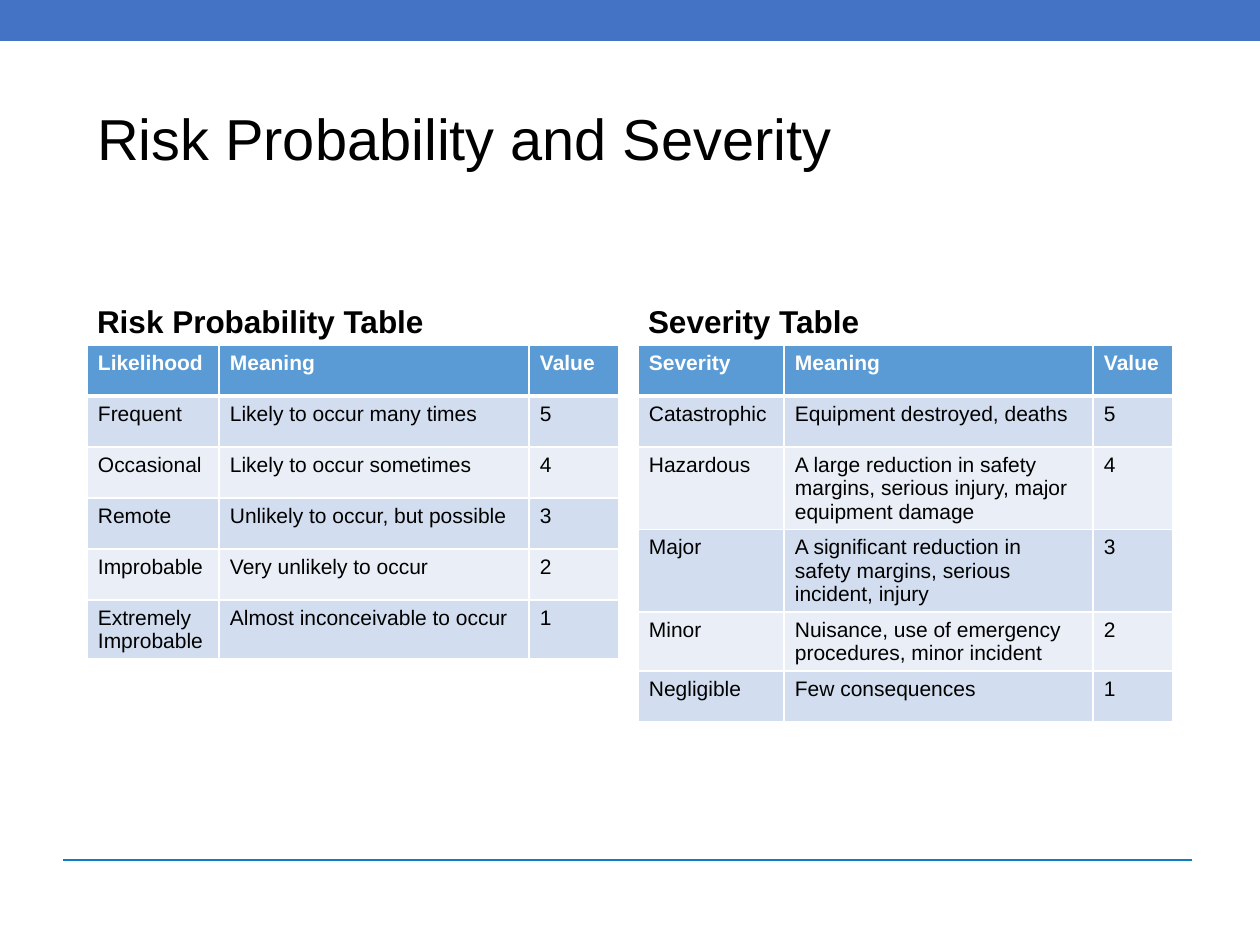
from dataclasses import dataclass

from lxml import etree
from pptx import Presentation
from pptx.dml.color import RGBColor
from pptx.enum.shapes import MSO_CONNECTOR, MSO_SHAPE
from pptx.enum.text import MSO_ANCHOR, MSO_AUTO_SIZE, PP_ALIGN
from pptx.oxml.ns import qn
from pptx.util import Emu, Pt

PX_PER_INCH = 126
FONT = "Arial"
COLORS = {
    "bar": "4472C4",
    "rule": "0F7FC5",
    "header": "5B9BD5",
    "odd_row": "D2DEEF",
    "even_row": "EAEFF7",
    "white": "FFFFFF",
    "black": "000000",
}
RECTANGLE = MSO_SHAPE.RECTANGLE
STRAIGHT = MSO_CONNECTOR.STRAIGHT
LEFT = PP_ALIGN.LEFT
TOP = MSO_ANCHOR.TOP
MIDDLE = MSO_ANCHOR.MIDDLE
BOTTOM = MSO_ANCHOR.BOTTOM
NO_AUTOFIT = MSO_AUTO_SIZE.NONE

COMPARISON_LAYOUT = 5 - 1
HEADING_TOP, HEADING_HEIGHT = 232, 113
TABLE_TOP = HEADING_TOP + HEADING_HEIGHT
ROW_HEIGHT = 51


@dataclass(frozen=True)
class Box:
    left: int
    top: int
    width: int
    height: int


@dataclass(frozen=True)
class RatingScale:
    heading: str
    heading_idx: int
    left: int
    columns: tuple[int, ...]
    rows: tuple[tuple[str, ...], ...]


SCALES = (
    RatingScale(
        "Risk Probability Table", 1, 87, (132, 310, 90),
        (
            ("Likelihood", "Meaning", "Value"),
            ("Frequent", "Likely to occur many times", "5"),
            ("Occasional", "Likely to occur sometimes", "4"),
            ("Remote", "Unlikely to occur, but possible", "3"),
            ("Improbable", "Very unlikely to occur", "2"),
            ("Extremely Improbable", "Almost inconceivable to occur", "1"),
        ),
    ),
    RatingScale(
        "Severity Table", 3, 638, (146, 309, 80),
        (
            ("Severity", "Meaning", "Value"),
            ("Catastrophic", "Equipment destroyed, deaths", "5"),
            ("Hazardous", "A large reduction in safety margins, serious injury, "
                          "major equipment damage", "4"),
            ("Major", "A significant reduction in safety margins, serious "
                      "incident, injury", "3"),
            ("Minor", "Nuisance, use of emergency procedures, minor incident", "2"),
            ("Negligible", "Few consequences", "1"),
        ),
    ),
)


def px(length: int) -> Emu:
    return Emu(round(length * 914400 / PX_PER_INCH))


def rgb(color: str) -> RGBColor:
    return RGBColor.from_string(COLORS[color])


def add_run(paragraph, text: str, size: int, color: str, bold: bool = False) -> None:
    run = paragraph.add_run()
    run.text = text
    run.font.name = FONT
    run.font.size = Pt(size)
    run.font.bold = bold
    run.font.color.rgb = rgb(color)


def fill_placeholder(placeholder, box: Box, text: str, size: int,
                     anchor, bold: bool = False) -> None:
    placeholder.left, placeholder.top = px(box.left), px(box.top)
    placeholder.width, placeholder.height = px(box.width), px(box.height)
    frame = placeholder.text_frame
    frame.auto_size = NO_AUTOFIT
    frame.word_wrap = True
    frame.vertical_anchor = anchor
    frame.margin_left = frame.margin_right = px(10)
    frame.margin_top = frame.margin_bottom = px(5)
    paragraph = frame.paragraphs[0]
    paragraph.alignment = LEFT
    paragraph.line_spacing = 0.9
    paragraph.space_before = Pt(0)
    add_run(paragraph, text, size, "black", bold)


def set_borders(cell, bottom_width: int) -> None:
    properties = cell._tc.get_or_add_tcPr()
    for side, width in (("L", 1), ("R", 1), ("T", 1), ("B", bottom_width)):
        border = etree.SubElement(properties, qn(f"a:ln{side}"), w=str(Pt(width)))
        fill = etree.SubElement(border, qn("a:solidFill"))
        etree.SubElement(fill, qn("a:srgbClr"), val=COLORS["white"])


def fill_cell(cell, text: str, row: int) -> None:
    is_header = row == 0
    set_borders(cell, 3 if is_header else 1)
    cell.fill.solid()
    cell.fill.fore_color.rgb = rgb(
        "header" if is_header else "odd_row" if row % 2 else "even_row")
    cell.margin_left = cell.margin_right = px(11)
    cell.margin_top = cell.margin_bottom = px(6)
    cell.vertical_anchor = TOP
    add_run(cell.text_frame.paragraphs[0], text, 12,
            "white" if is_header else "black", is_header)


def draw_scale(slide, scale: RatingScale) -> None:
    width = sum(scale.columns)
    fill_placeholder(
        slide.placeholders[scale.heading_idx],
        Box(scale.left, HEADING_TOP, width, HEADING_HEIGHT),
        scale.heading, 18, BOTTOM, True)
    table = slide.shapes.add_table(
        len(scale.rows), len(scale.columns), px(scale.left), px(TABLE_TOP),
        px(width), px(ROW_HEIGHT * len(scale.rows))).table
    for column, column_width in zip(table.columns, scale.columns):
        column.width = px(column_width)
    for row, texts in enumerate(scale.rows):
        table.rows[row].height = px(ROW_HEIGHT)
        for column, text in enumerate(texts):
            fill_cell(table.cell(row, column), text, row)


def draw_bar(slide, box: Box) -> None:
    bar = slide.shapes.add_shape(
        RECTANGLE, px(box.left), px(box.top), px(box.width), px(box.height))
    bar.shadow.inherit = False
    bar.fill.solid()
    bar.fill.fore_color.rgb = rgb("bar")
    bar.line.fill.background()


def draw_rule(slide, left: int, right: int, top: int) -> None:
    rule = slide.shapes.add_connector(STRAIGHT, px(left), px(top), px(right), px(top))
    rule.line.color.rgb = rgb("rule")
    rule.line.width = Pt(1.5)
    etree.SubElement(rule._element.spPr, qn("a:effectLst"))


def main() -> None:
    presentation = Presentation()
    presentation.slide_width, presentation.slide_height = px(1260), px(945)
    slide = presentation.slides.add_slide(
        presentation.slide_layouts[COMPARISON_LAYOUT])
    draw_rule(slide, 63, 1192, 860)
    draw_bar(slide, Box(0, 0, 1260, 41))
    fill_placeholder(slide.shapes.title, Box(87, 50, 1086, 183),
                     "Risk Probability and Severity", 33, MIDDLE)
    for scale in SCALES:
        draw_scale(slide, scale)
    for placeholder in list(slide.placeholders):
        if not placeholder.text_frame.text:
            placeholder._element.getparent().remove(placeholder._element)
    presentation.save("out.pptx")


if __name__ == "__main__":
    main()
